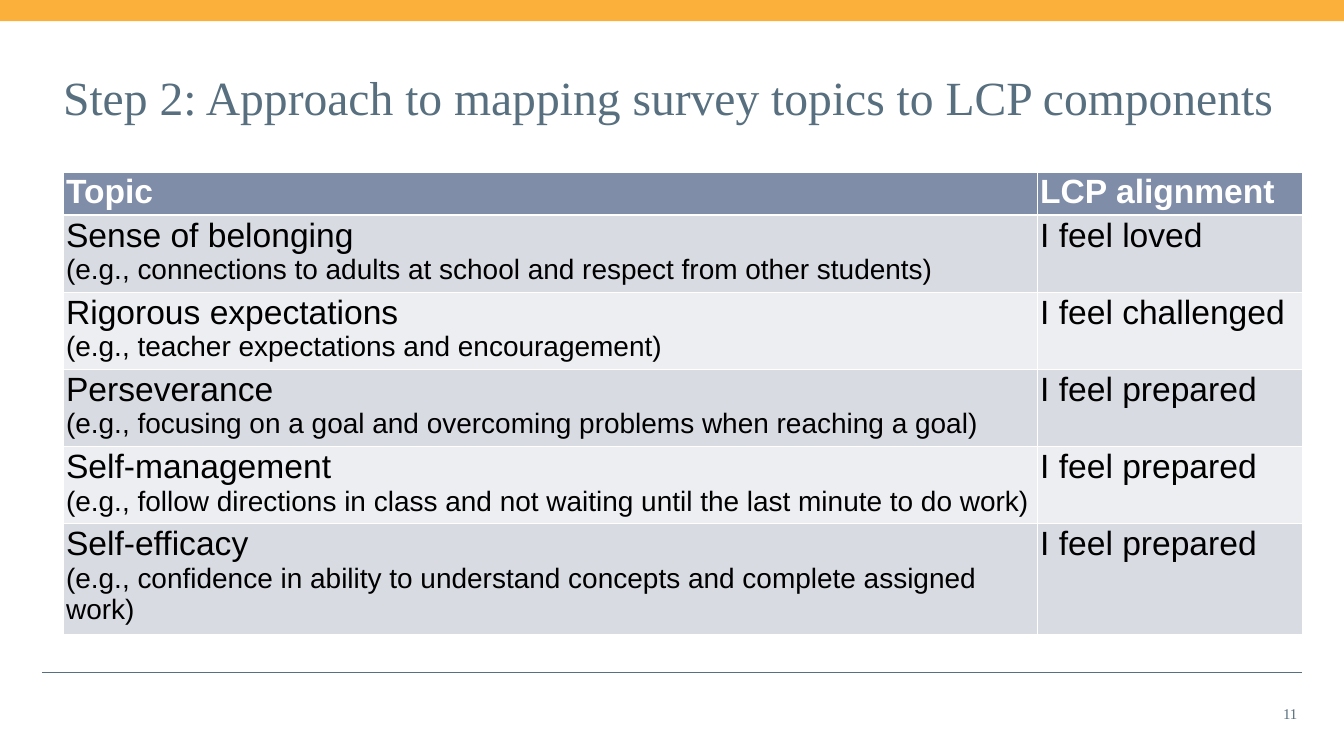
import pptx
import pptx.util
import pptx.dml.color
import pptx.enum.shapes
import pptx.enum.text
import pptx.oxml
import pptx.oxml.ns
from pptx.util import Cm

HUES = {"gold": "FBB03B", "slate": "576F7F", "head": "808DA9",
        "dark": "D8DBE2", "light": "EDEEF1", "white": "FFFFFF", "black": "000000"}
SERIF, SANS = "Times New Roman", "Arial"
ALIGN = pptx.enum.text.PP_ALIGN
ANCHOR = pptx.enum.text.MSO_ANCHOR

HEAD = ("Topic", "LCP alignment")
TOPICS = [
    ("Sense of belonging",
     "(e.g., connections to adults at school and respect from other students)",
     "I feel loved"),
    ("Rigorous expectations",
     "(e.g., teacher expectations and encouragement)",
     "I feel challenged"),
    ("Perseverance",
     "(e.g., focusing on a goal and overcoming problems when reaching a goal)",
     "I feel prepared"),
    ("Self-management",
     "(e.g., follow directions in class and not waiting until the last minute to do work)",
     "I feel prepared"),
    ("Self-efficacy",
     "(e.g., confidence in ability to understand concepts and complete assigned work)",
     "I feel prepared"),
]


def tint(name):
    return pptx.dml.color.RGBColor.from_string(HUES[name])


class Deck:
    def __init__(self, wide, high):
        self.show = pptx.Presentation()
        self.show.slide_width, self.show.slide_height = wide, high
        self.slide = self.show.slides.add_slide(self.show.slide_layouts[5])

    def words(self, para, text, size, font, hue, bold=False, align=ALIGN.LEFT):
        para.alignment = align
        run = para.add_run()
        run.text = text
        run.font.size = pptx.util.Pt(size)
        run.font.name = font
        run.font.bold = bold
        run.font.color.rgb = tint(hue)

    def bar(self, left, top, wide, high, hue):
        kind = pptx.enum.shapes.MSO_SHAPE.RECTANGLE
        shape = self.slide.shapes.add_shape(kind, left, top, wide, high)
        shape.shadow.inherit = False
        shape.fill.solid()
        shape.fill.fore_color.rgb = tint(hue)
        shape.line.fill.background()

    def rule(self, left, right, top, hue):
        kind = pptx.enum.shapes.MSO_CONNECTOR.STRAIGHT
        line = self.slide.shapes.add_connector(kind, left, top, right, top)
        line.line.color.rgb = tint(hue)
        line.line.width = pptx.util.Pt(0.75)
        line._element.spPr.append(pptx.oxml.parse_xml(
            f'<a:effectLst {pptx.oxml.ns.nsdecls("a")}/>'))

    def title(self, left, top, wide, high, text):
        shape = self.slide.shapes.title
        shape.left, shape.top, shape.width, shape.height = left, top, wide, high
        frame = shape.text_frame
        frame.word_wrap = True
        frame.auto_size = pptx.enum.text.MSO_AUTO_SIZE.NONE
        frame.vertical_anchor = ANCHOR.MIDDLE
        frame.margin_left = frame.margin_right = 0
        frame.margin_top = frame.margin_bottom = 0
        self.words(frame.paragraphs[0], text, 68, SERIF, "slate")

    def note(self, left, top, wide, high, text):
        frame = self.slide.shapes.add_textbox(left, top, wide, high).text_frame
        frame.word_wrap = True
        frame.vertical_anchor = ANCHOR.MIDDLE
        self.words(frame.paragraphs[0], text, 21.3, SERIF, "slate", align=ALIGN.RIGHT)

    def table(self, left, top, cols, rows):
        grid = self.slide.shapes.add_table(
            len(rows), len(cols), left, top, sum(cols), sum(rows)).table
        for col, wide in zip(grid.columns, cols):
            col.width = wide
        for row, high in zip(grid.rows, rows):
            row.height = high
        return grid

    def edge(self, cell, **widths):
        for side in "LRTB":
            cell._tc.get_or_add_tcPr().append(pptx.oxml.parse_xml(
                f'<a:ln{side} {pptx.oxml.ns.nsdecls("a")} '
                f'w="{pptx.util.Pt(widths.get(side, 1))}"><a:solidFill>'
                f'<a:srgbClr val="{HUES["white"]}"/></a:solidFill></a:ln{side}>'))

    def cell(self, cell, lines, fill, hue, bold=False, **widths):
        cell.margin_left = cell.margin_right = Cm(0.15)
        cell.margin_top = cell.margin_bottom = Cm(0.08)
        self.edge(cell, **widths)
        cell.fill.solid()
        cell.fill.fore_color.rgb = tint(fill)
        frame = cell.text_frame
        for i, (text, size) in enumerate(lines):
            para = frame.add_paragraph() if i else frame.paragraphs[0]
            self.words(para, text, size, SANS, hue, bold)


def main():
    deck = Deck(Cm(67.74), Cm(38.1))

    # Frame of the page
    deck.rule(Cm(2.11), Cm(65.61), Cm(33.86), "slate")
    deck.bar(0, 0, Cm(67.74), Cm(1.07), "gold")
    deck.title(Cm(3.18), Cm(3.18), Cm(61.4), Cm(3.38),
               "Step 2: Approach to mapping survey topics to LCP components")
    deck.note(Cm(63), Cm(34.95), Cm(2.64), Cm(2.03), "11")

    # Topics and their alignment
    rows = [Cm(2.11)] + [Cm(3.73)] * 4 + [Cm(5.27)]
    grid = deck.table(Cm(3.18), Cm(8.66), [Cm(49.1), Cm(13.34)], rows)
    for x, text in enumerate(HEAD):
        deck.cell(grid.cell(0, x), [(text, 48)], "head", "white", True, B=3)
    for y, (topic, case, goal) in enumerate(TOPICS, 1):
        fill = "dark" if y % 2 else "light"
        top = 3 if y == 1 else 1
        deck.cell(grid.cell(y, 0), [(topic, 48), (case, 40)], fill, "black", T=top)
        deck.cell(grid.cell(y, 1), [(goal, 48)], fill, "black", T=top)

    deck.show.save("out.pptx")


if __name__ == "__main__":
    main()
